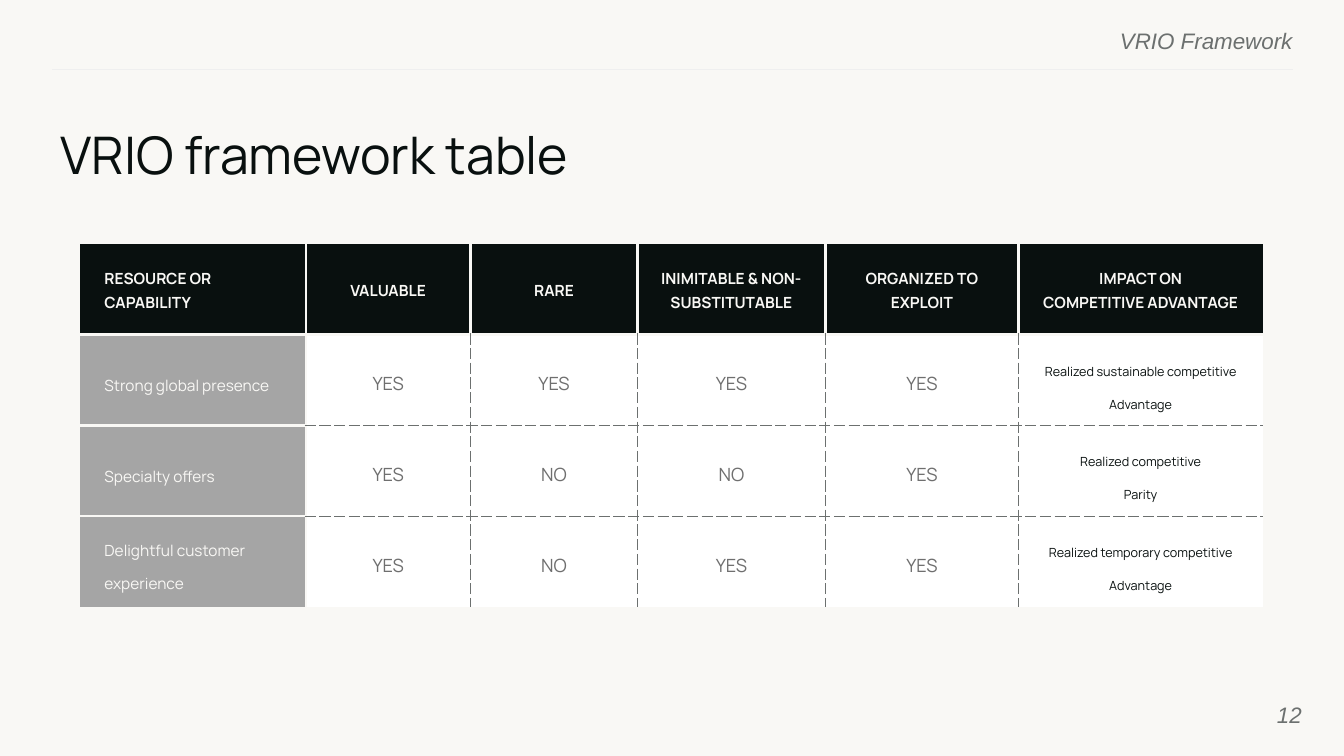
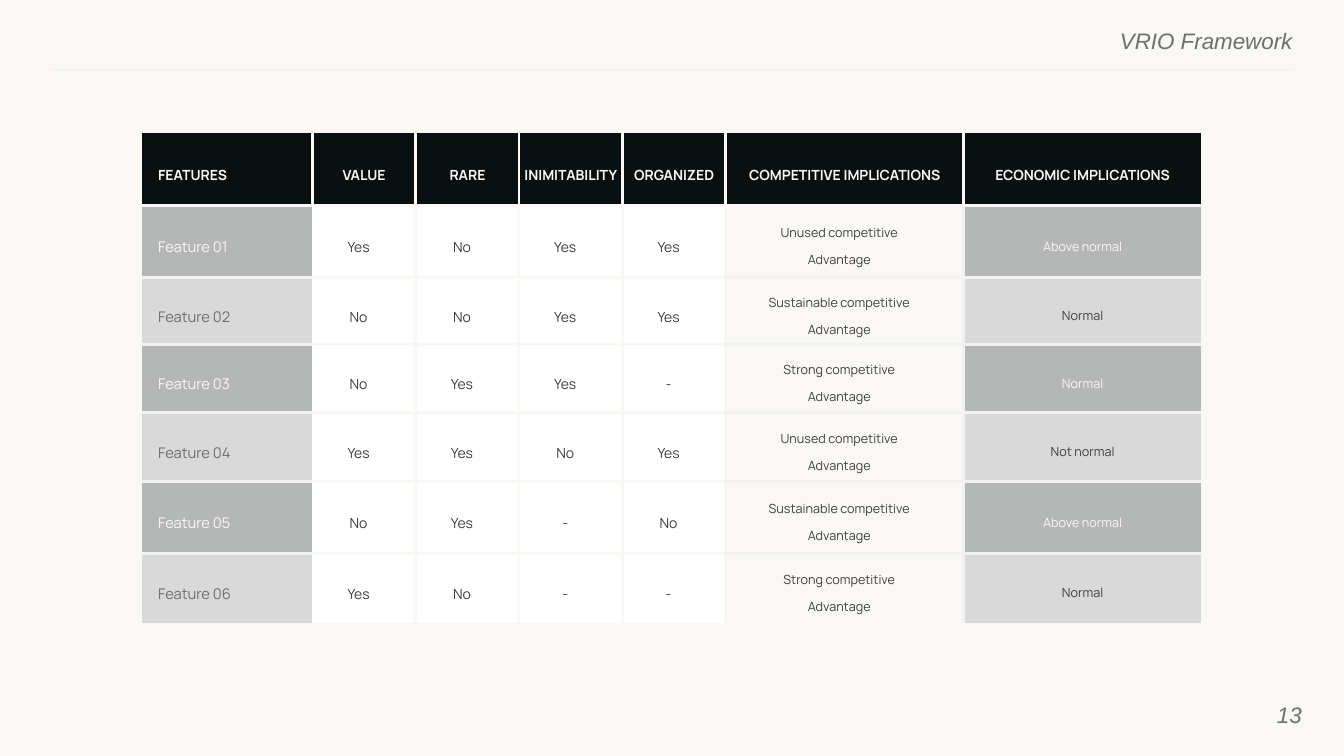
from dataclasses import dataclass, replace

from lxml.etree import SubElement
from pptx import Presentation
from pptx.dml.color import RGBColor
from pptx.enum.shapes import MSO_CONNECTOR as Connector
from pptx.enum.text import MSO_ANCHOR as Anchor, PP_ALIGN as Align
from pptx.oxml import parse_xml
from pptx.oxml.ns import nsdecls, qn
from pptx.util import Inches, Pt

COLOURS = {
    "paper": "F9F8F5", "ink": "09100F", "muted": "6C706F", "grey_text": "6F6F6F",
    "dark_text": "3F3F3F", "rule": "EFEFEF", "white": "FFFFFF", "label": "A5A5A5",
    "band_dark": "B5B7B7", "band_light": "D9D9D9", "gap": "F2F2F2",
}
PLAIN_TABLE = "{2D5ABB26-0587-4C30-8999-92F81FD0307C}"


@dataclass(frozen=True)
class TextStyle:
    size: float
    colour: str
    font: str = "Manrope"
    bold: bool = False
    italic: bool = False
    align: Align = Align.CENTER
    spacing: float = 1.0
    margins: tuple = (0, 0, 0, 0)  # left, top, right, bottom in inches
    fill: str = "white"  # used by table cells


@dataclass(frozen=True)
class Edge:
    colour: str
    width: float = 2.25
    dash: str = "solid"


TITLE = TextStyle(37, "ink", align=Align.LEFT)
RUNNING = TextStyle(16, "muted", font="Arial", italic=True, align=Align.RIGHT)
PAPER_EDGE, GAP_EDGE = Edge("paper"), Edge("gap")
DASHED_EDGE = Edge("muted", 0.75, "dash")


class Deck:
    """Holds the style and the current slide; lengths are percent of the slide."""

    def __init__(self):
        self.presentation = Presentation()
        self.presentation.slide_width = Inches(13.33)
        self.presentation.slide_height = Inches(7.5)
        self.slide = None

    def across(self, share):
        return round(self.presentation.slide_width * share / 100)

    def down(self, share):
        return round(self.presentation.slide_height * share / 100)

    def box(self, left, top, width, height):
        return self.across(left), self.down(top), self.across(width), self.down(height)

    def colour(self, name):
        return RGBColor.from_string(COLOURS[name])

    def new_slide(self, number):
        self.slide = self.presentation.slides.add_slide(self.presentation.slide_layouts[6])
        background = self.slide.background.fill
        background.solid()
        background.fore_color.rgb = self.colour("paper")
        self.text("VRIO Framework", (57.61, 3.6, 38.56, 3.2), RUNNING)
        self.line(3.9, 96.17, 9.2)
        self.text(str(number), (90.85, 90.67, 6, 7.6), RUNNING, Anchor.MIDDLE)

    def fill_text(self, frame, text, style):
        frame.text = text
        for paragraph in frame.paragraphs:
            paragraph.alignment = style.align
            paragraph.line_spacing = style.spacing
            font = paragraph.font
            font.name, font.size = style.font, Pt(style.size)
            font.bold, font.italic = style.bold, style.italic
            font.color.rgb = self.colour(style.colour)

    def set_margins(self, target, margins):
        left, top, right, bottom = (Inches(margin) for margin in margins)
        target.margin_left, target.margin_top = left, top
        target.margin_right, target.margin_bottom = right, bottom

    def text(self, text, place, style, anchor=Anchor.TOP):
        frame = self.slide.shapes.add_textbox(*self.box(*place)).text_frame
        frame.word_wrap = True
        frame.vertical_anchor = anchor
        self.set_margins(frame, style.margins)
        self.fill_text(frame, text, style)

    def line(self, start, end, height):
        y = self.down(height)
        rule = self.slide.shapes.add_connector(
            Connector.STRAIGHT, self.across(start), y, self.across(end), y)
        rule.line.color.rgb = self.colour("rule")
        rule.line.width = Pt(0.75)
        SubElement(rule.element.spPr, qn("a:effectLst"))

    def border(self, cell, position, side, edge):
        border = parse_xml(
            f'<a:ln{side} {nsdecls("a")} w="{Pt(edge.width)}"><a:solidFill>'
            f'<a:srgbClr val="{COLOURS[edge.colour]}"/></a:solidFill>'
            f'<a:prstDash val="{edge.dash}"/></a:ln{side}>')
        cell._tc.get_or_add_tcPr().insert(position, border)

    def table(self, left, top, widths, heights, rows, style_of, right_edge, bottom_edge):
        place = self.box(left, top, sum(widths), sum(heights))
        shape = self.slide.shapes.add_table(len(rows), len(widths), *place)
        table = shape.table
        table._tbl.tblPr.find(qn("a:tableStyleId")).text = PLAIN_TABLE
        for column, width in zip(table.columns, widths):
            column.width = self.across(width)
        for row, height in zip(table.rows, heights):
            row.height = self.down(height)
        last_row, last_column = len(rows) - 1, len(widths) - 1
        for r, texts in enumerate(rows):
            for c, text in enumerate(texts):
                cell, style = table.cell(r, c), style_of(r, c)
                cell.vertical_anchor = Anchor.MIDDLE
                self.set_margins(cell, style.margins)
                self.fill_text(cell.text_frame, text, style)
                cell.fill.solid()
                cell.fill.fore_color.rgb = self.colour(style.fill)
                # Neighbours share an edge; the outside stays open
                edges = {
                    "L": right_edge(r, c - 1) if c else None,
                    "R": right_edge(r, c) if c < last_column else None,
                    "T": bottom_edge(r - 1, c) if r else None,
                    "B": bottom_edge(r, c) if r < last_row else None,
                }
                drawn = [(side, edge) for side, edge in edges.items() if edge]
                for position, (side, edge) in enumerate(drawn):
                    self.border(cell, position, side, edge)


# Resource table: styles and edges
RESOURCE_HEADER = TextStyle(11, "paper", bold=True, spacing=1.15, fill="ink")
RESOURCE_CORNER = replace(RESOURCE_HEADER, align=Align.LEFT, margins=(0.24, 0.02, 0.05, 0.02))
RESOURCE_LABEL = TextStyle(11, "paper", align=Align.LEFT, spacing=1.56,
                           margins=(0.24, 0, 0, 0), fill="label")
RESOURCE_ANSWER = TextStyle(13, "grey_text", spacing=1.32)
RESOURCE_IMPACT = TextStyle(9, "ink", spacing=1.91)


def resource_style(row, column):
    if row == 0:
        return RESOURCE_HEADER if column else RESOURCE_CORNER
    return {0: RESOURCE_LABEL, 5: RESOURCE_IMPACT}.get(column, RESOURCE_ANSWER)


def resource_edge(row, column):
    return DASHED_EDGE if row and column else PAPER_EDGE


# Feature table: styles and edges
FEATURE_HEADER = TextStyle(10, "paper", bold=True, spacing=1.62, fill="ink",
                           margins=(0, 0.05, 0, 0.05))
FEATURE_CORNER = replace(FEATURE_HEADER, align=Align.LEFT, margins=(0.16, 0, 0, 0))
FEATURE_LABEL = TextStyle(10.5, "paper", align=Align.LEFT, spacing=1.54,
                          margins=(0.16, 0, 0, 0), fill="band_dark")
FEATURE_ANSWER = TextStyle(10, "dark_text", spacing=1.62, margins=(0, 0.05, 0.11, 0.05))
FEATURE_COMPETITIVE = replace(FEATURE_ANSWER, size=9, spacing=1.58, fill="paper")
FEATURE_ECONOMIC = TextStyle(9, "paper", spacing=1.58, fill="band_dark")


def feature_style(row, column):
    if row == 0:
        return FEATURE_HEADER if column else FEATURE_CORNER
    light = row % 2 == 0
    if column == 0:
        return replace(FEATURE_LABEL, colour="grey_text", fill="band_light") if light else FEATURE_LABEL
    if column == 6:
        return replace(FEATURE_ECONOMIC, colour="dark_text", fill="band_light") if light else FEATURE_ECONOMIC
    return FEATURE_COMPETITIVE if column == 5 else FEATURE_ANSWER


def feature_right_edge(row, column):
    if row and column == 0:
        return None
    return GAP_EDGE if row and column == 5 else PAPER_EDGE


def feature_bottom_edge(row, column):
    return GAP_EDGE if row and column in (0, 5, 6) else PAPER_EDGE


RESOURCE_ROWS = [
    ("RESOURCE OR\nCAPABILITY", "VALUABLE", "RARE", "INIMITABLE & NON-SUBSTITUTABLE",
     "ORGANIZED TO\nEXPLOIT", "IMPACT ON\nCOMPETITIVE ADVANTAGE"),
    ("Strong global presence", "YES", "YES", "YES", "YES",
     "Realized sustainable competitive\nAdvantage"),
    ("Specialty offers", "YES", "NO", "NO", "YES", "Realized competitive\nParity"),
    ("Delightful customer experience", "YES", "NO", "YES", "YES",
     "Realized temporary competitive\nAdvantage"),
]
FEATURE_HEADINGS = ("FEATURES", "VALUE", "RARE", "INIMITABILITY", "ORGANIZED",
                    "COMPETITIVE IMPLICATIONS", "ECONOMIC IMPLICATIONS")
FEATURE_ANSWERS = [
    ("Yes", "No", "Yes", "Yes", "Unused", "Above normal"),
    ("No", "No", "Yes", "Yes", "Sustainable", "Normal"),
    ("No", "Yes", "Yes", "-", "Strong", "Normal"),
    ("Yes", "Yes", "No", "Yes", "Unused", "Not normal"),
    ("No", "Yes", "-", "No", "Sustainable", "Above normal"),
    ("Yes", "No", "-", "-", "Strong", "Normal"),
]


def main():
    deck = Deck()

    # Resources against the four tests
    deck.new_slide(12)
    deck.text("VRIO framework table", (4.5, 16.27, 55, 9.07), TITLE)
    deck.table(5.97, 32.27, [16.8, 12.23, 12.45, 13.95, 14.4, 18.15], [12] * 4,
               RESOURCE_ROWS, resource_style, resource_edge, resource_edge)

    # Features and their implications
    deck.new_slide(13)
    feature_rows = [FEATURE_HEADINGS] + [
        (f"Feature {number:02}", *answers, f"{strength} competitive\nAdvantage", economic)
        for number, (*answers, strength, economic) in enumerate(FEATURE_ANSWERS, 1)]
    deck.table(10.57, 17.6, [12.68] + [7.69] * 4 + [17.7] * 2,
               [9.6, 9.47, 8.93, 8.93, 9.2, 9.47, 9.2],
               feature_rows, feature_style, feature_right_edge, feature_bottom_edge)

    deck.presentation.save("out.pptx")


if __name__ == "__main__":
    main()
